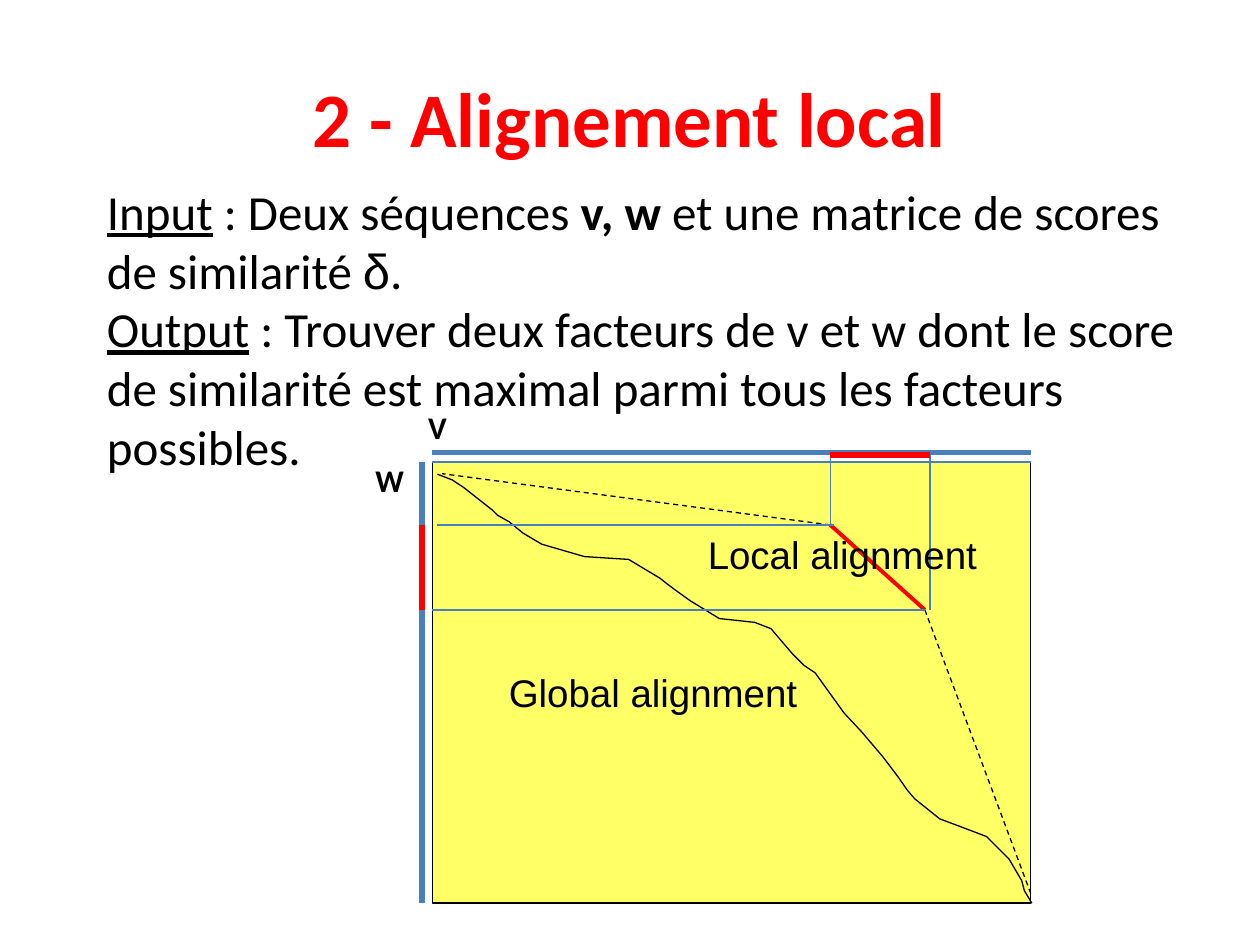
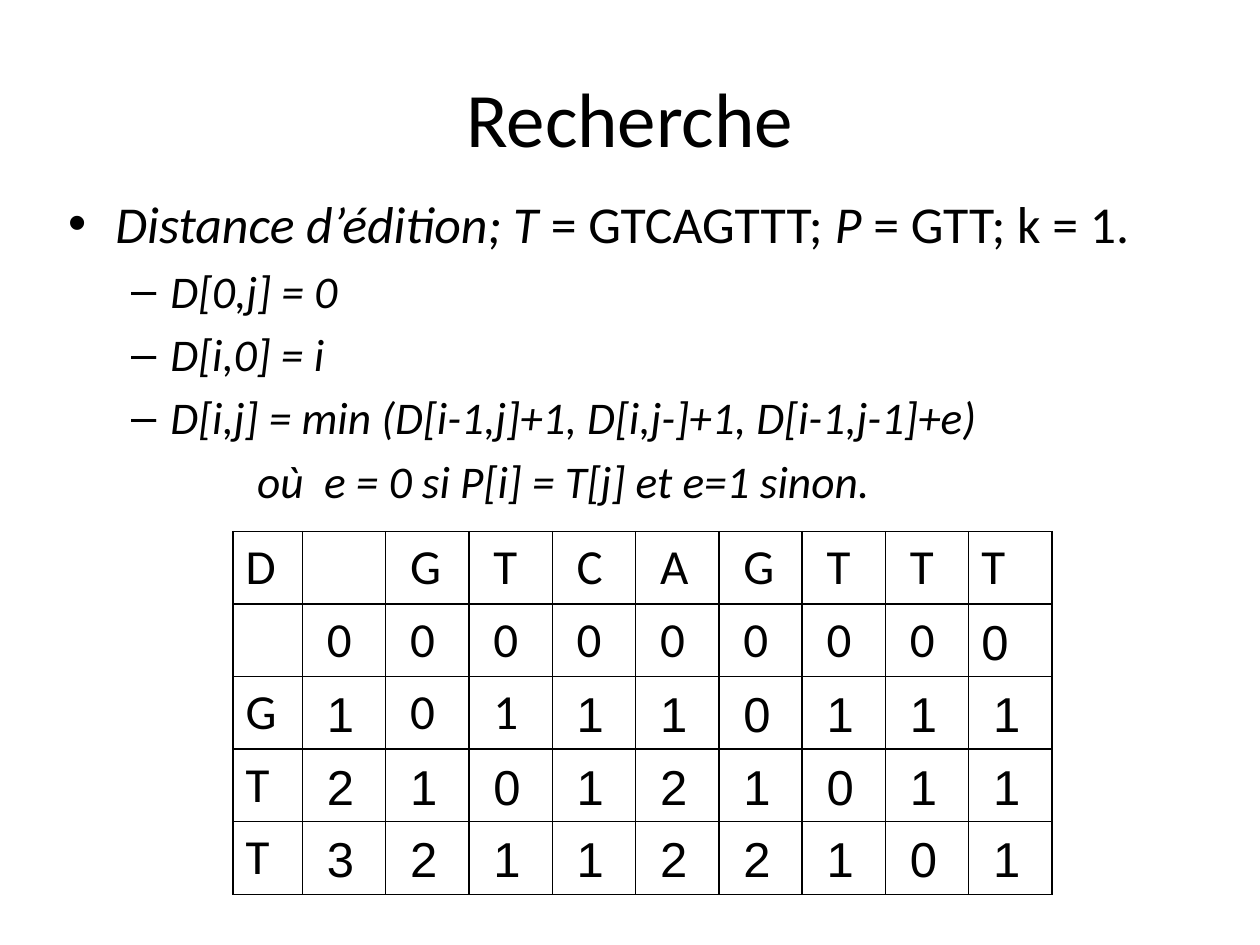
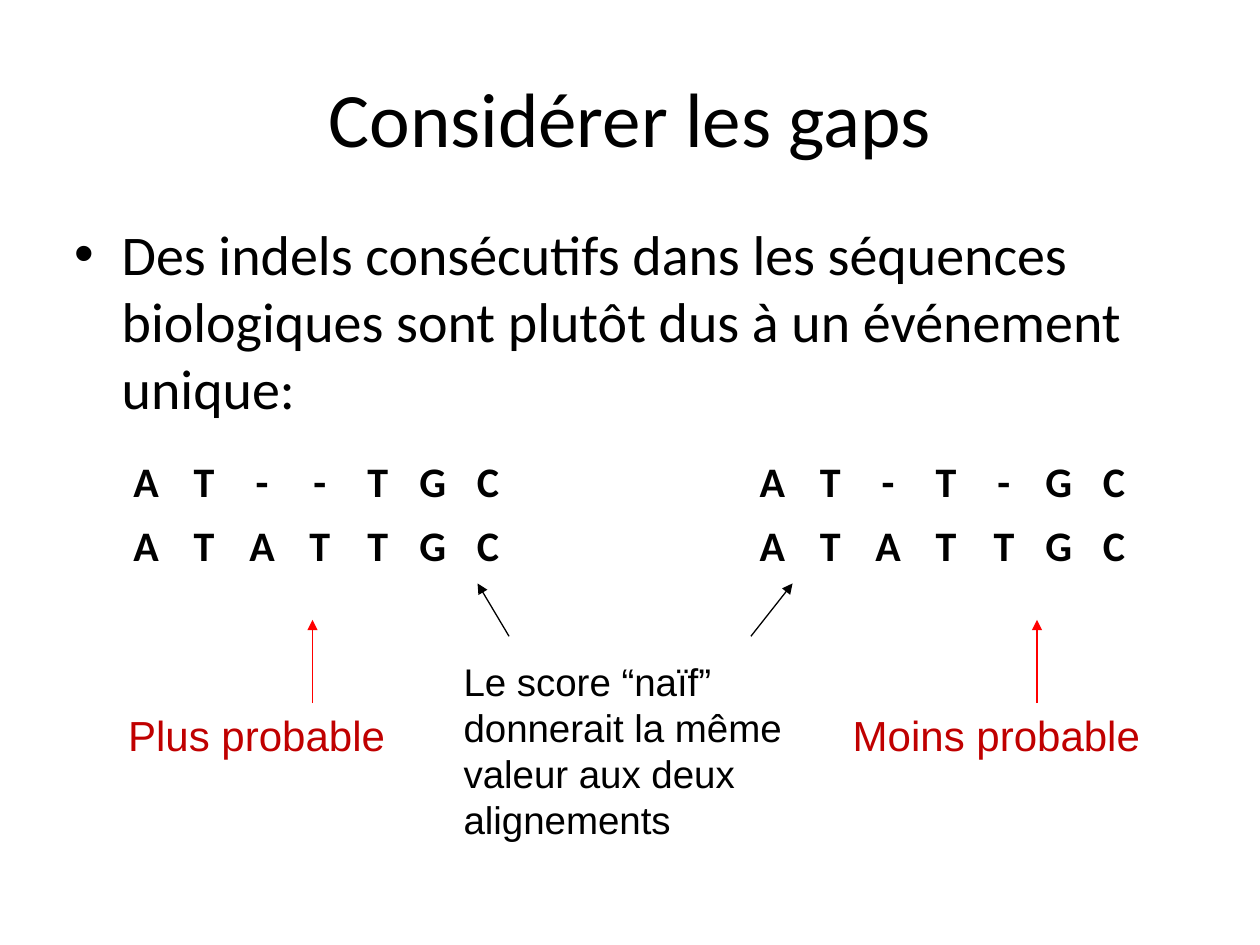
"""Build three slides on local alignment, approximate search and gaps."""
import lxml.etree
import pptx
import pptx.dml.color
import pptx.enum.dml
import pptx.enum.shapes
import pptx.enum.text
import pptx.oxml.ns
import pptx.util

Pt = pptx.util.Pt
qn = pptx.oxml.ns.qn


class Theme:
    black, red, brick = "000000", "FF0000", "C00000"
    blue, yellow = "4B7EBC", "FFFF66"
    main, plain = "Calibri", "Arial"
    title, lead, task, list1, list2 = 44, 32, 28, 29.6, 25.9
    note, label, mark, grid = 22, 24, 18, 28
    thin, bold, thick = 0.75, 2.25, 3


def put(para, text, size, face=Theme.main, hue=Theme.black, bold=False, ital=False, under=False):
    run = para.add_run()
    run.text = text
    font = run.font
    font.name, font.size = face, Pt(size)
    font.bold, font.italic, font.underline = bold, ital, under
    font.color.rgb = pptx.dml.color.RGBColor.from_string(hue)


def draw(slide, ends, hue, width=Theme.thin, dash=False, arrow=False):
    link = slide.shapes.add_connector(
        pptx.enum.shapes.MSO_CONNECTOR.STRAIGHT, *[Pt(n) for n in ends])
    link.line.color.rgb = pptx.dml.color.RGBColor.from_string(hue)
    link.line.width = Pt(width)
    if dash:
        link.line.dash_style = pptx.enum.dml.MSO_LINE.DASH
    if arrow:
        lxml.etree.SubElement(link.line._get_or_add_ln(), qn("a:tailEnd"), type="triangle")
    lxml.etree.SubElement(link._element.spPr, qn("a:effectLst"))


deck = pptx.Presentation()
deck.slide_width, deck.slide_height = Pt(720), Pt(540)

slides = []
for title, hue, bold, layout in [
    ("2 - Alignement local", Theme.red, True, 5),
    ("Recherche", Theme.black, False, 1),
    ("Considérer les gaps", Theme.black, False, 1),
]:
    slide = deck.slides.add_slide(deck.slide_layouts[layout])
    head = slide.shapes.title
    head.left, head.top, head.width, head.height = Pt(36), Pt(21.6), Pt(648), Pt(90)
    put(head.text_frame.paragraphs[0], title, Theme.title, hue=hue, bold=bold)
    slides.append(slide)
local, search, gaps = slides

task = local.shapes.add_textbox(Pt(54), Pt(100), Pt(641), Pt(177)).text_frame
task.word_wrap = True
put(task.paragraphs[0], "Input", Theme.task, under=True)
put(task.paragraphs[0], " : Deux séquences ", Theme.task)
put(task.paragraphs[0], "v, w", Theme.task, bold=True)
put(task.paragraphs[0], " et une matrice de scores de similarité ", Theme.task)
put(task.paragraphs[0], "δ", Theme.task, face=Theme.plain)
put(task.paragraphs[0], ".", Theme.task)
goal = task.add_paragraph()
put(goal, "Output", Theme.task, under=True)
put(goal, " : Trouver deux facteurs de v et w dont le score de similarité "
          "est maximal parmi tous les facteurs possibles.", Theme.task)

left, top, right, base = 247, 264, 589, 516
panel = local.shapes.add_shape(
    pptx.enum.shapes.MSO_SHAPE.RECTANGLE, Pt(left), Pt(top), Pt(right - left), Pt(base - top))
panel.fill.solid()
panel.fill.fore_color.rgb = pptx.dml.color.RGBColor.from_string(Theme.yellow)

trace = [
    (250, 271), (258.5, 274.3), (265, 278.6), (281.5, 291.6), (284.4, 294.5), (290.9, 298.1),
    (298.8, 304.6), (309.6, 311), (334, 318.1), (359.3, 319.7), (377.3, 330.5), (380.9, 333.4),
    (386.6, 337.7), (394.6, 343.4), (411.1, 353.5), (431.3, 355.7), (440.6, 359.3),
    (452.9, 373.7), (456.5, 377.3), (459.4, 380.2), (465.8, 384.5), (482.4, 407.5),
    (492.5, 418.3), (504.7, 432.7), (513.4, 444.2), (518.4, 451.4), (522.7, 456.5),
    (537.1, 468), (554.4, 474.5), (563.8, 478.1), (576.7, 491), (583.9, 503.3),
    (585.4, 509), (589.7, 516.2),
]
points = [(Pt(x), Pt(y)) for x, y in trace]
pen = local.shapes.build_freeform(*points[0])
pen.add_line_segments(points[1:], close=False)
curve = pen.convert_to_shape()
curve.fill.background()
for shape in (panel, curve):
    shape.shadow.inherit = False
    shape.line.width = Pt(Theme.thin)
    shape.line.color.rgb = pptx.dml.color.RGBColor.from_string(Theme.black)

x1, y1, x2, y2 = 474.5, 300, 528.5, 348.5
edge, rail, side = 531.4, 258.5, 241.2
draw(local, (x1, y1, x2, y2), Theme.red, Theme.bold)
draw(local, (x1, y1, 252.7, 270.7), Theme.black, dash=True)
draw(local, (x2, y2, right, 510.5), Theme.black, dash=True)
for ends, hue, width in [
    ((left, top, right, top), Theme.blue, Theme.thin),
    ((left, rail, right, rail), Theme.blue, Theme.thick),
    ((side, top, side, base), Theme.blue, Theme.thick),
    ((x1, y1, x1, rail), Theme.blue, Theme.thin),
    ((edge, y2, edge, rail), Theme.blue, Theme.thin),
    ((250, y1, 476.6, y1), Theme.blue, Theme.thin),
    ((left, y2, x2, y2), Theme.blue, Theme.thin),
    ((x1, 260, edge, 260), Theme.red, Theme.thick),
    ((side, y1, side, y2), Theme.red, Theme.thick),
]:
    draw(local, ends, hue, width)

rules = [
    (0, [("Distance d’édition; T", True), (" = GTCAGTTT; ", False),
         ("P", True), (" = GTT; k = 1.", False)]),
    (1, [("D[0,j] = 0", True)]),
    (1, [("D[i,0] = i", True)]),
    (1, [("D[i,j] = min (D[i-1,j]+1, D[i,j-]+1, D[i-1,j-1]+e)", True)]),
    (1, [("où  e = 0 si P[i] = T[j] et e=1 sinon.", True)]),
]
claim = [(0, [("Des indels consécutifs dans les séquences biologiques "
               "sont plutôt dus à un événement unique:", False)])]
for slide, items, spot, sizes in [
    (search, rules, (31.7, 105.8, 669.6, 187.2), (Theme.list1, Theme.list2)),
    (gaps, claim, (35.3, 121.7, 648, 356.4), (Theme.lead,)),
]:
    body = slide.placeholders[1]
    body.left, body.top, body.width, body.height = [Pt(n) for n in spot]
    frame = body.text_frame
    frame.auto_size = pptx.enum.text.MSO_AUTO_SIZE.NONE
    for place, (level, parts) in enumerate(items):
        para = frame.add_paragraph() if place else frame.paragraphs[0]
        para.level = level
        for text, ital in parts:
            put(para, text, sizes[level], ital=ital)
where = search.placeholders[1].text_frame.paragraphs[-1]._p.get_or_add_pPr()
where.set("marL", str(Pt(108)))
where.set("indent", "0")
lxml.etree.SubElement(where, qn("a:buNone"))

costs = ["D GTCAGTTT", " 000000000", "G101110111", "T210121011", "T321122101"]
pairs = [46 / 1.39] * 5 + [26.6, 39.6]
for slide, lines, spot, widths, high, size, ruled in [
    (search, costs, (133.2, 303.8), [39.6] + [47.6] * 9, 41.4, Theme.grid, True),
    (gaps, ["AT-T-GC", "ATATTGC"], (424.8, 257.8), pairs, 36, Theme.label, False),
    (gaps, ["AT--TGC", "ATATTGC"], (67, 257.8), pairs, 36.7, Theme.label, False),
]:
    table = slide.shapes.add_table(
        len(lines), len(widths), Pt(spot[0]), Pt(spot[1]),
        Pt(sum(widths)), Pt(high * len(lines))).table
    table.first_row = table.horz_banding = False
    for col, width in zip(table.columns, widths):
        col.width = Pt(width)
    for r, line in enumerate(lines):
        table.rows[r].height = Pt(high)
        for c, sign in enumerate(line):
            cell = table.cell(r, c)
            cell.fill.background()
            para = cell.text_frame.paragraphs[0]
            face = Theme.main
            if ruled:
                cell.vertical_anchor = pptx.enum.text.MSO_ANCHOR.BOTTOM
                if c and not (c == 9 and r < 2):
                    cell.margin_left = Pt(14)
                if (r > 2 and c) or (r == 2 and c not in (0, 2, 3)) or (r, c) == (1, 9):
                    face = Theme.plain
                for n, tag in enumerate(("a:lnL", "a:lnR", "a:lnT", "a:lnB")):
                    rim = lxml.etree.Element(qn(tag), w=str(Pt(1)))
                    tint = lxml.etree.SubElement(rim, qn("a:solidFill"))
                    lxml.etree.SubElement(tint, qn("a:srgbClr"), val=Theme.black)
                    cell._tc.get_or_add_tcPr().insert(n, rim)
            else:
                para.alignment = pptx.enum.text.PP_ALIGN.CENTER
            if sign != " ":
                put(para, sign, size, face=face, bold=not ruled)

for ends, hue in [
    ((290.9, 363.6, 272.9, 333.4), Theme.black),
    ((429.1, 363.6, 452.9, 333.4), Theme.black),
    ((178.6, 401.8, 178.6, 354.2), Theme.red),
    ((592.6, 401.8, 592.6, 354.2), Theme.red),
]:
    draw(gaps, ends, hue, arrow=True)

note = dict(size=Theme.note, face=Theme.plain)
label = dict(size=Theme.label, face=Theme.plain, hue=Theme.brick)
mark = dict(size=Theme.mark, bold=True)
for slide, text, spot, style in [
    (local, "Global alignment", (283.7, 378.7, 208.8, 33.8), note),
    (local, "Local alignment", (397.4, 300.2, 203.8, 33.8), note),
    (local, "V", (237.6, 229.7, 25.2, 28.8), mark),
    (local, "W", (207.4, 259.9, 31, 28.8), mark),
    (gaps, "Le score “naïf” donnerait la même valeur aux deux alignements",
     (257.8, 372.2, 231, 113.8), note),
    (gaps, "Plus probable", (66.2, 401.8, 177, 36.7), label),
    (gaps, "Moins probable", (480.2, 401.8, 203, 36.7), label),
]:
    frame = slide.shapes.add_textbox(*[Pt(n) for n in spot]).text_frame
    frame.word_wrap = style is not mark
    put(frame.paragraphs[0], text, **style)

deck.save("out.pptx")
